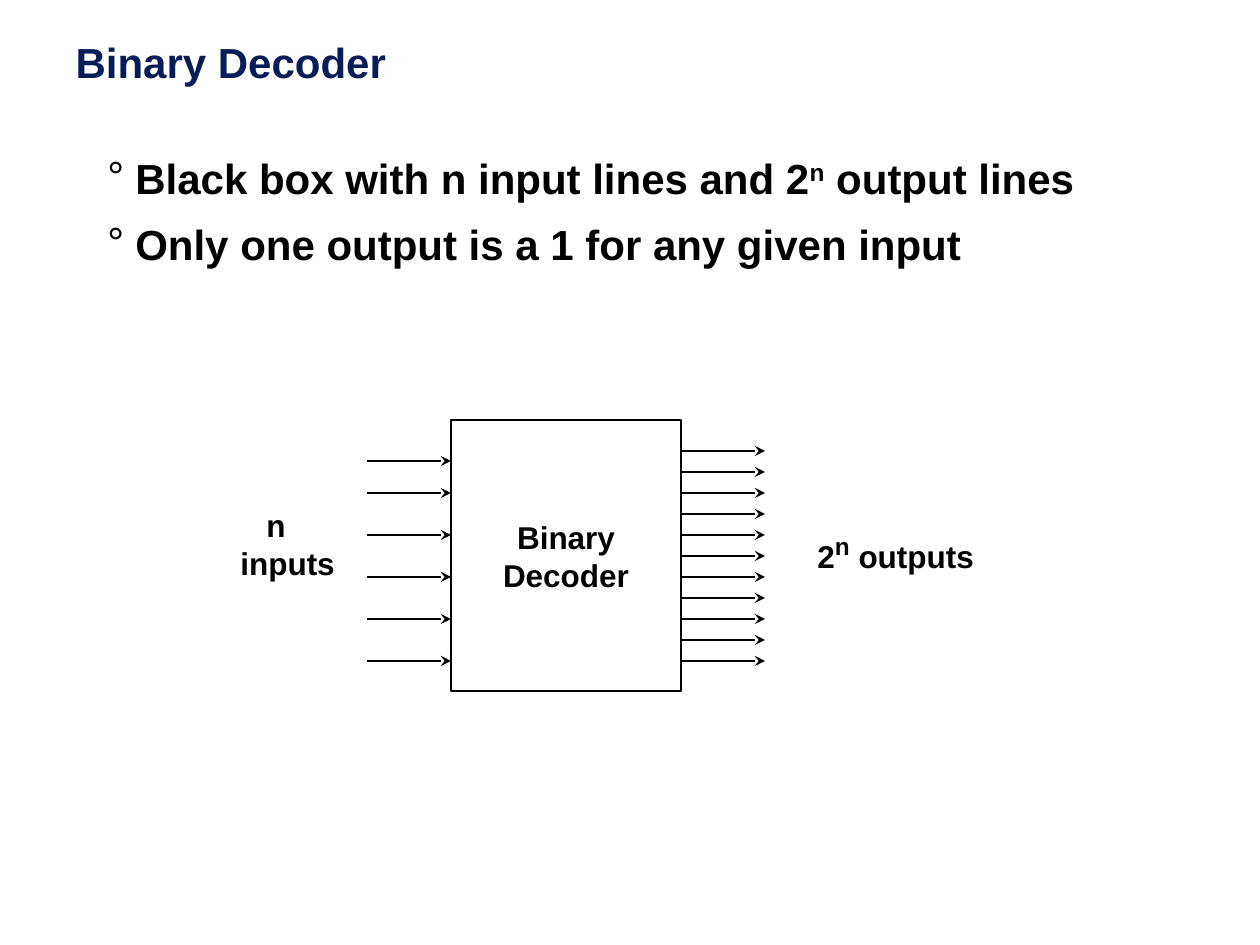
from lxml import etree
from pptx import Presentation
from pptx import util as u
from pptx.dml.color import RGBColor
from pptx.enum import shapes, text
from pptx.oxml import ns

NAVY = RGBColor(0x08, 0x1D, 0x58)
BLACK = RGBColor(0, 0, 0)
WHITE = RGBColor(0xFF, 0xFF, 0xFF)
FONT = "Arial"
EMU_PER_PX = 914400 / 126


def px(length):
    return u.Emu(round(length * EMU_PER_PX))


def add_run(paragraph, words, size, color=BLACK, raised=False):
    run = paragraph.add_run()
    run.text = words
    font = run.font
    font.name, font.size, font.bold = FONT, u.Pt(size), True
    font.color.rgb = color
    if raised:
        font._element.set("baseline", "30000")


def add_text_box(slide, box, wrap=False):
    shape = slide.shapes.add_textbox(*map(px, box))
    shape.text_frame.word_wrap = wrap
    return shape.text_frame


def add_arrow(slide, left, right, y):
    arrow = slide.shapes.add_connector(
        shapes.MSO_CONNECTOR.STRAIGHT, px(left), px(y), px(right), px(y))
    arrow.line.color.rgb = BLACK
    arrow.line.width = u.Pt(1)
    line = arrow.line._get_or_add_ln()
    etree.SubElement(line, ns.qn("a:tailEnd"), type="stealth")
    etree.SubElement(arrow._element.spPr, ns.qn("a:effectLst"))


def set_bullet(paragraph, character, indent):
    properties = paragraph._p.get_or_add_pPr()
    properties.set("marL", str(px(indent)))
    properties.set("indent", str(-px(indent)))
    etree.SubElement(properties, ns.qn("a:buFont"), typeface=FONT)
    etree.SubElement(properties, ns.qn("a:buChar"), char=character)


def fill_title(slide, box):
    title = slide.shapes.title
    title.left, title.top, title.width, title.height = map(px, box)
    frame = title.text_frame
    frame.auto_size = text.MSO_AUTO_SIZE.NONE
    frame.vertical_anchor = text.MSO_ANCHOR.BOTTOM
    paragraph = frame.paragraphs[0]
    paragraph.alignment = text.PP_ALIGN.LEFT
    paragraph.line_spacing = 0.87
    add_run(paragraph, "Binary Decoder", 24, NAVY)


def add_bullets(slide, box):
    frame = add_text_box(slide, box, wrap=True)
    lines, only_one = frame.paragraphs[0], frame.add_paragraph()
    for paragraph in (lines, only_one):
        paragraph.line_spacing = 0.75
        paragraph.space_before = u.Pt(16)
        set_bullet(paragraph, "°", 28)
    add_run(lines, "Black box with n input lines and 2", 24)
    add_run(lines, "n", 24, raised=True)
    add_run(lines, " output lines", 24)
    add_run(only_one, "Only one output is a 1 for any given input", 24)


def add_decoder(slide, box):
    """Draw the decoder in its box, with arrows and labels on both sides."""
    left, top, width, height = box
    right = left + width
    shape = slide.shapes.add_shape(
        shapes.MSO_SHAPE.RECTANGLE, *map(px, box))
    shape.shadow.inherit = False
    shape.fill.solid()
    shape.fill.fore_color.rgb = WHITE
    shape.line.color.rgb = BLACK
    shape.line.width = u.Pt(1)
    frame = shape.text_frame
    frame.word_wrap = False
    frame.vertical_anchor = text.MSO_ANCHOR.MIDDLE
    name, kind = frame.paragraphs[0], frame.add_paragraph()
    for paragraph, word in ((name, "Binary"), (kind, "Decoder")):
        paragraph.alignment = text.PP_ALIGN.CENTER
        add_run(paragraph, word, 18)

    arrow_length = 84
    for offset in (41, *range(73, 242, 42)):
        add_arrow(slide, left - arrow_length, left, top + offset)
    for offset in range(31, 242, 21):
        add_arrow(slide, right, right + arrow_length, top + offset)

    frame = add_text_box(slide, (left - 223, top + 80, 120, 88))
    count, inputs = frame.paragraphs[0], frame.add_paragraph()
    count._p.get_or_add_pPr().set("marL", str(px(26)))
    add_run(count, "n", 18)
    add_run(inputs, "inputs", 18)

    outputs = add_text_box(
        slide, (right + 124, top + 100, 184, 50)).paragraphs[0]
    add_run(outputs, "2", 18)
    add_run(outputs, "n", 24, raised=True)
    add_run(outputs, " outputs", 18)


def main():
    presentation = Presentation()
    presentation.slide_width, presentation.slide_height = px(1260), px(945)
    slide = presentation.slides.add_slide(presentation.slide_layouts[5])
    fill_title(slide, (63, 21, 567, 73))
    add_bullets(slide, (95, 158, 1081, 305))
    add_decoder(slide, (451, 420, 230, 271))
    presentation.save("out.pptx")


if __name__ == "__main__":
    main()
